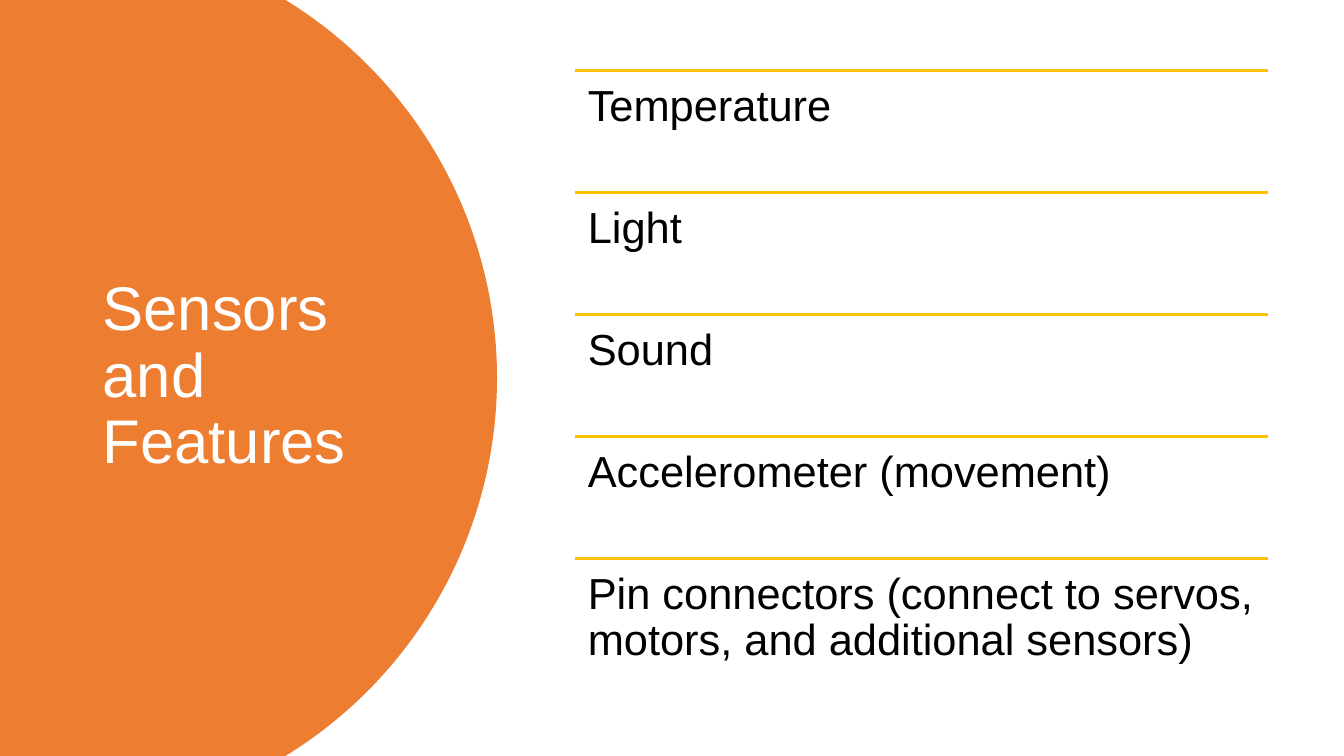
import math

from lxml import etree
from pptx import Presentation
from pptx.dml.color import RGBColor
from pptx.enum.shapes import MSO_CONNECTOR
from pptx.enum.text import MSO_ANCHOR, PP_ALIGN
from pptx.oxml.ns import qn
from pptx.util import Inches, Pt

STRAIGHT = MSO_CONNECTOR.STRAIGHT
TOP, MIDDLE = MSO_ANCHOR.TOP, MSO_ANCHOR.MIDDLE
LEFT = PP_ALIGN.LEFT

# Content
TITLE = "Sensors and Features"
FEATURES = [
    "Temperature",
    "Light",
    "Sound",
    "Accelerometer (movement)",
    "Pin connectors (connect to servos, motors, and additional sensors)",
]

THEME = {
    "font": "Arial",
    "panel": RGBColor(0xED, 0x7D, 0x31),
    "rule": RGBColor(0xFF, 0xC0, 0x00),
    "rule_width": Pt(2),
    "title": {"size": Pt(44), "color": RGBColor(0xFF, 0xFF, 0xFF)},
    "feature": {"size": Pt(31), "color": RGBColor(0, 0, 0)},
}

# Layout, in inches
SLIDE_W, SLIDE_H = 13.33, 7.5
ARC_CENTER_X, ARC_RADIUS, ARC_STEPS = 0.53, 4.4, 120
TITLE_BOX = (0.92, 0.7, 3.23, 6.09)
LIST_LEFT, LIST_TOP, LIST_W, ROW_H = 5.7, 0.7, 6.88, 1.21
TITLE_INSETS, FEATURE_INSETS = (0.1, 0.05), (0.13, 0.13)


def add_text(shapes, text, box, style, anchor, insets):
    frame = shapes.add_textbox(*map(Inches, box)).text_frame
    side, end = map(Inches, insets)
    frame_format = {
        "word_wrap": True, "vertical_anchor": anchor,
        "margin_left": side, "margin_right": side,
        "margin_top": end, "margin_bottom": end,
    }
    for name, value in frame_format.items():
        setattr(frame, name, value)
    paragraph = frame.paragraphs[0]
    paragraph.alignment = LEFT
    paragraph.line_spacing = 0.9
    run = paragraph.add_run()
    run.text = text
    run.font.name = THEME["font"]
    run.font.size = style["size"]
    run.font.color.rgb = style["color"]


def add_rule(shapes, left, top, width):
    rule = shapes.add_connector(
        STRAIGHT, Inches(left), Inches(top), Inches(left + width), Inches(top))
    rule.line.color.rgb = THEME["rule"]
    rule.line.width = THEME["rule_width"]
    etree.SubElement(rule._element.spPr, qn("a:effectLst"))


def add_panel(shapes):
    half_h = SLIDE_H / 2
    half_angle = math.asin(half_h / ARC_RADIUS)
    outline = []
    for step in range(ARC_STEPS + 1):
        angle = half_angle * (2 * step / ARC_STEPS - 1)
        outline.append((Inches(ARC_CENTER_X + ARC_RADIUS * math.cos(angle)),
                        Inches(half_h + ARC_RADIUS * math.sin(angle))))
    outline.append((0, Inches(SLIDE_H)))
    builder = shapes.build_freeform(0, 0)
    builder.add_line_segments(outline, close=True)
    panel = builder.convert_to_shape()
    panel.shadow.inherit = False
    panel.fill.solid()
    panel.fill.fore_color.rgb = THEME["panel"]
    panel.line.fill.background()


def main():
    prs = Presentation()
    prs.slide_width, prs.slide_height = Inches(SLIDE_W), Inches(SLIDE_H)
    slide = prs.slides.add_slide(prs.slide_layouts[6])

    # Rounded panel with the title
    add_panel(slide.shapes)
    add_text(slide.shapes, TITLE, TITLE_BOX, THEME["title"], MIDDLE, TITLE_INSETS)

    # Ruled list of features
    feature_list = slide.shapes.add_group_shape()
    for row, feature in enumerate(FEATURES):
        top = LIST_TOP + row * ROW_H
        add_rule(feature_list.shapes, LIST_LEFT, top, LIST_W)
        add_text(feature_list.shapes, feature, (LIST_LEFT, top, LIST_W, ROW_H),
                 THEME["feature"], TOP, FEATURE_INSETS)

    prs.save("out.pptx")


if __name__ == "__main__":
    main()
